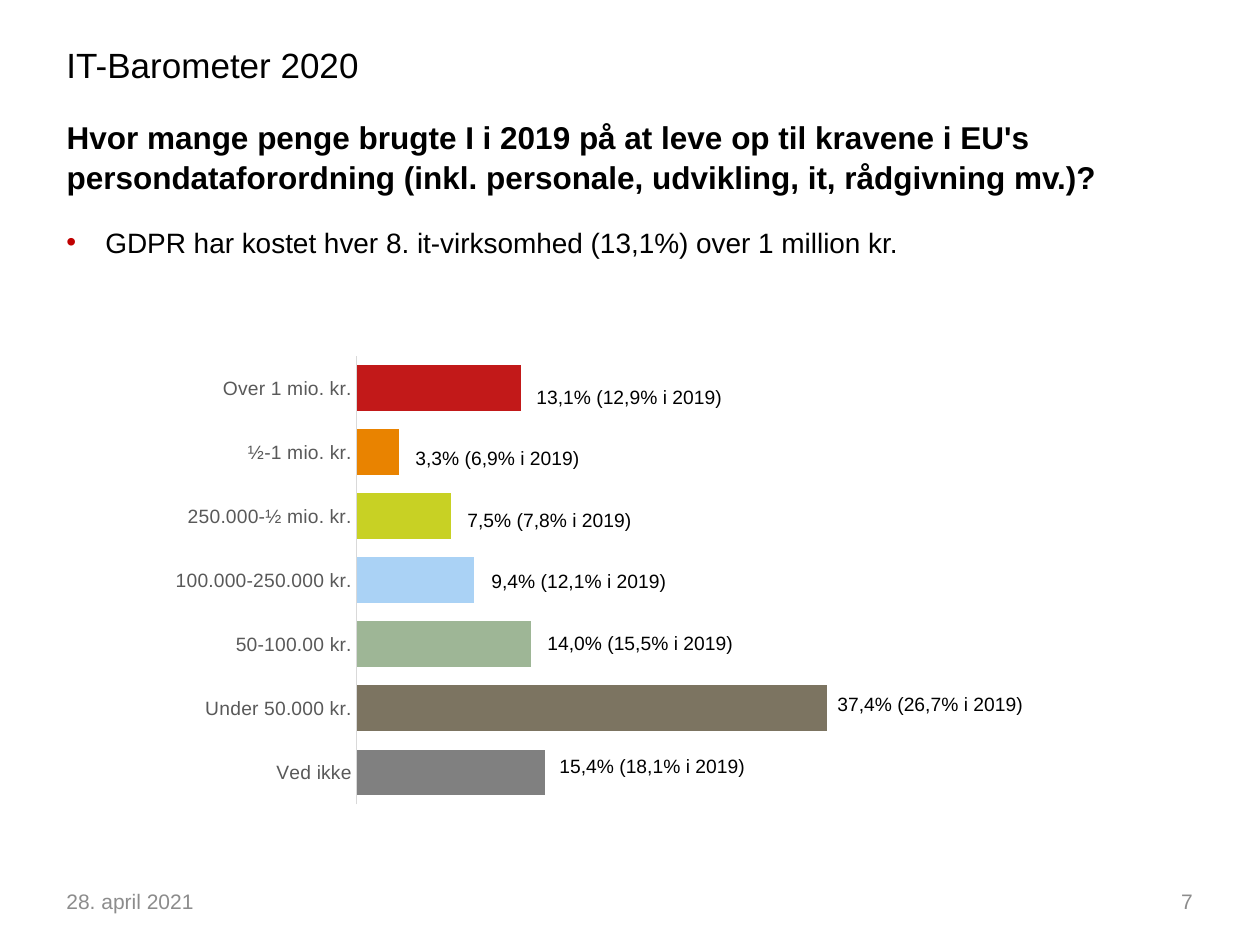
from lxml.etree import SubElement
from pptx import Presentation
from pptx.chart.data import CategoryChartData
from pptx.dml.color import RGBColor
from pptx.enum.chart import XL_CHART_TYPE as ChartType, XL_TICK_MARK as TickMark
from pptx.enum.text import MSO_ANCHOR as Anchor, MSO_AUTO_SIZE as AutoSize, PP_ALIGN as Align
from pptx.oxml.ns import qn
from pptx.util import Pt

FONT = "Arial"
BLACK, GREY, FOOTER_GREY = "000000", "595959", "8C8C8C"
BARS = [
    ("Over 1 mio. kr.", 35, "C21919", "13,1% (12,9% i 2019)", 363),
    ("½-1 mio. kr.", 9, "E98300", "3,3% (6,9% i 2019)", 242),
    ("250.000-½ mio. kr.", 20, "C8D124", "7,5% (7,8% i 2019)", 294),
    ("100.000-250.000 kr.", 25, "AAD2F5", "9,4% (12,1% i 2019)", 318),
    ("50-100.00 kr.", 37, "9EB696", "14,0% (15,5% i 2019)", 374),
    ("Under 50.000 kr.", 100, "7C7461", "37,4% (26,7% i 2019)", 664),
    ("Ved ikke", 40, "808080", "15,4% (18,1% i 2019)", 386),
]


def px(length):
    return round(length * 914400 / 126)


def color(value):
    return RGBColor.from_string(value)


def set_font(font, size, value, bold=False):
    font.name = FONT
    font.size = Pt(size)
    font.bold = bold
    font.color.rgb = color(value)


def add_text(slide, box, text, size, value=BLACK, align=Align.LEFT, anchor=Anchor.TOP):
    shape = slide.shapes.add_textbox(*map(px, box))
    frame = shape.text_frame
    frame.word_wrap = True
    frame.vertical_anchor = anchor
    paragraph = frame.paragraphs[0]
    paragraph.text = text
    paragraph.alignment = align
    set_font(paragraph.font, size, value)
    return shape


def add_header(slide, left, top, width):
    add_text(slide, (left, top, 400, 50), "IT-Barometer 2020", 20)
    title = slide.shapes.title
    title.left, title.top, title.width, title.height = map(px, (left, top + 73, width, 101))
    frame = title.text_frame
    frame.text = ("Hvor mange penge brugte I i 2019 på at leve op til kravene i EU's "
                  "persondataforordning (inkl. personale, udvikling, it, rådgivning mv.)?")
    frame.word_wrap = True
    frame.auto_size = AutoSize.NONE
    frame.vertical_anchor = Anchor.TOP
    paragraph = frame.paragraphs[0]
    paragraph.alignment = Align.LEFT
    paragraph.line_spacing = 1.05
    set_font(paragraph.font, 18, BLACK, bold=True)


def add_bullet(slide, box, text):
    frame = slide.shapes.add_textbox(*map(px, box)).text_frame
    frame.word_wrap = True
    paragraph = frame.paragraphs[0]
    paragraph.text = text
    properties = paragraph._p.get_or_add_pPr()
    properties.set("marL", str(px(39)))
    properties.set("indent", str(-px(39)))
    bullet_color = SubElement(properties, qn("a:buClr"))
    SubElement(bullet_color, qn("a:srgbClr"), val="C00000")
    SubElement(properties, qn("a:buFont"), typeface=FONT)
    SubElement(properties, qn("a:buChar"), char="•")
    set_font(paragraph.font, 16, BLACK)


def set_plot_layout(chart, **fractions):
    plot_area = chart._chartSpace.chart.plotArea
    for old_layout in plot_area.findall(qn("c:layout")):
        plot_area.remove(old_layout)
    layout = plot_area.makeelement(qn("c:layout"))
    plot_area.insert(0, layout)
    manual = SubElement(layout, qn("c:manualLayout"))
    SubElement(manual, qn("c:layoutTarget"), val="inner")
    for name in ("xMode", "yMode"):
        SubElement(manual, qn(f"c:{name}"), val="edge")
    for name, fraction in fractions.items():
        SubElement(manual, qn(f"c:{name}"), val=str(fraction))


def add_spending_chart(slide, left, top, width, height):
    bars = BARS[::-1]
    data = CategoryChartData()
    data.categories = [bar[0] for bar in bars]
    data.add_series("Series 1", [bar[1] for bar in bars])
    frame = slide.shapes.add_chart(
        ChartType.BAR_CLUSTERED, *map(px, (left, top, width, height)), data)
    chart = frame.chart
    chart.has_legend = False
    chart.has_title = False
    set_font(chart.font, 10, BLACK)
    set_plot_layout(chart, x=0.275, y=0.02, w=0.66, h=0.96)

    category_axis = chart.category_axis
    category_axis.major_tick_mark = TickMark.NONE
    category_axis.minor_tick_mark = TickMark.NONE
    category_axis.format.line.color.rgb = color("D9D9D9")
    category_axis.format.line.width = Pt(0.75)
    set_font(category_axis.tick_labels.font, 11, GREY)

    value_axis = chart.value_axis
    value_axis.minimum_scale = 0
    value_axis.maximum_scale = 100
    value_axis.has_major_gridlines = False
    value_axis.tick_labels.number_format = "0.00%"
    value_axis.tick_labels.number_format_is_linked = False
    value_axis.visible = False

    plot = chart.plots[0]
    plot.gap_width = 40
    plot.overlap = -25
    plot.vary_by_categories = False
    series = plot.series[0]
    series.format.fill.solid()
    series.format.fill.fore_color.rgb = color(BARS[0][2])
    for index, bar in enumerate(bars[:-1]):
        fill = series.points[index].format.fill
        fill.solid()
        fill.fore_color.rgb = color(bar[2])

    for index, (_, _, _, label, offset) in enumerate(BARS):
        label_top = top + 32 + index * 369 // 6
        label_width = 11 * len(label) - 8
        shape = add_text(slide, (left + offset, label_top, label_width, 37), label, 11)
        shape.text_frame.word_wrap = False
        shape.text_frame.auto_size = AutoSize.SHAPE_TO_FIT_TEXT


def add_footer(slide, left, top, width, height):
    part = 294
    add_text(slide, (left, top, part, height), "28. april 2021", 12, FOOTER_GREY,
             anchor=Anchor.MIDDLE)
    add_text(slide, (left + width - part, top, part, height), "7", 12, FOOTER_GREY,
             Align.RIGHT, Anchor.MIDDLE)


def main():
    presentation = Presentation()
    presentation.slide_width, presentation.slide_height = px(1260), px(945)
    slide = presentation.slides.add_slide(presentation.slide_layouts[5])
    add_header(slide, 54, 37, 1134)
    add_bullet(slide, (54, 219, 1037, 145),
               "GDPR har kostet hver 8. it-virksomhed (13,1%) over 1 million kr.")
    add_spending_chart(slide, 161, 347, 712, 467)
    add_footer(slide, 54, 876, 1151, 50)
    presentation.save("out.pptx")


if __name__ == "__main__":
    main()
